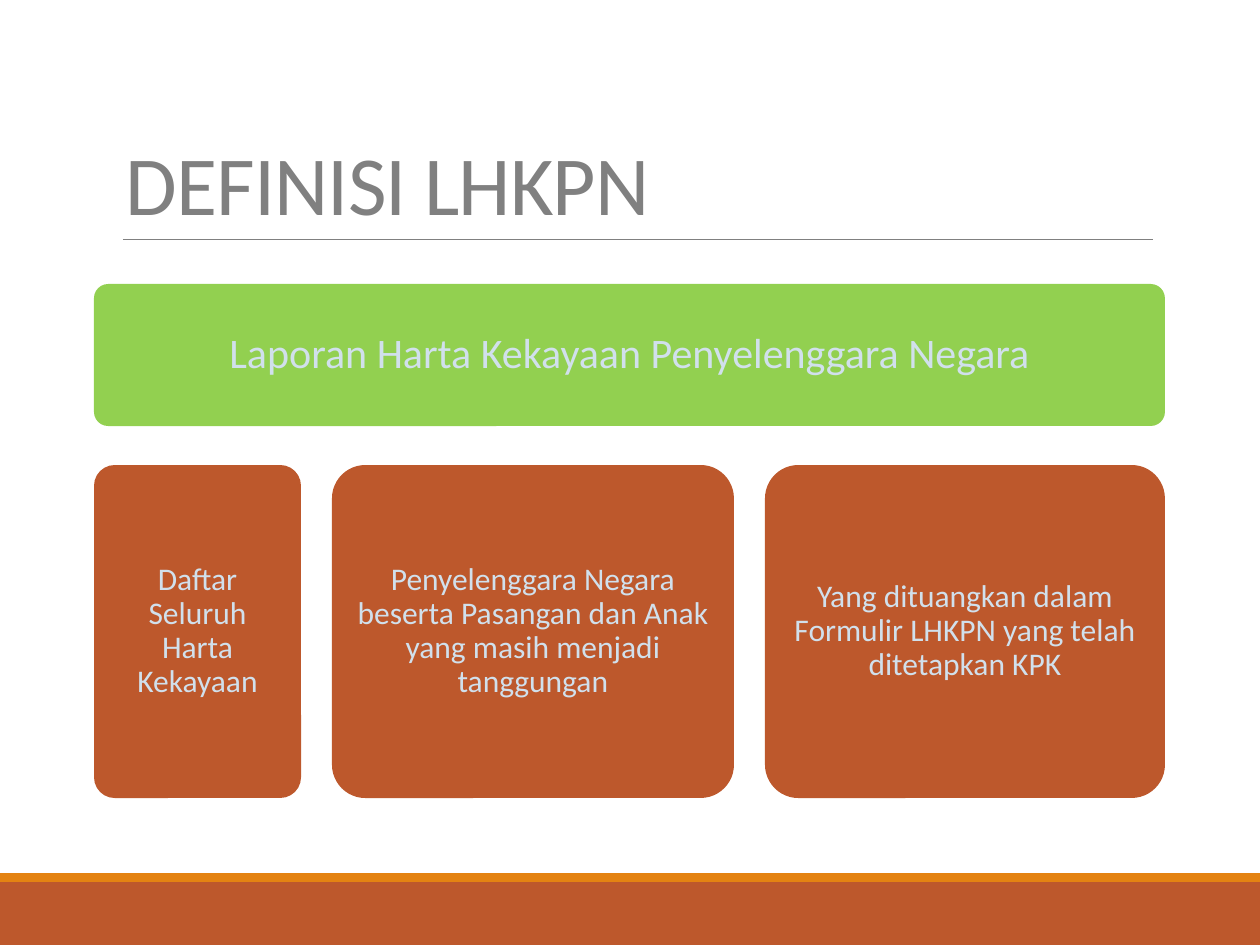
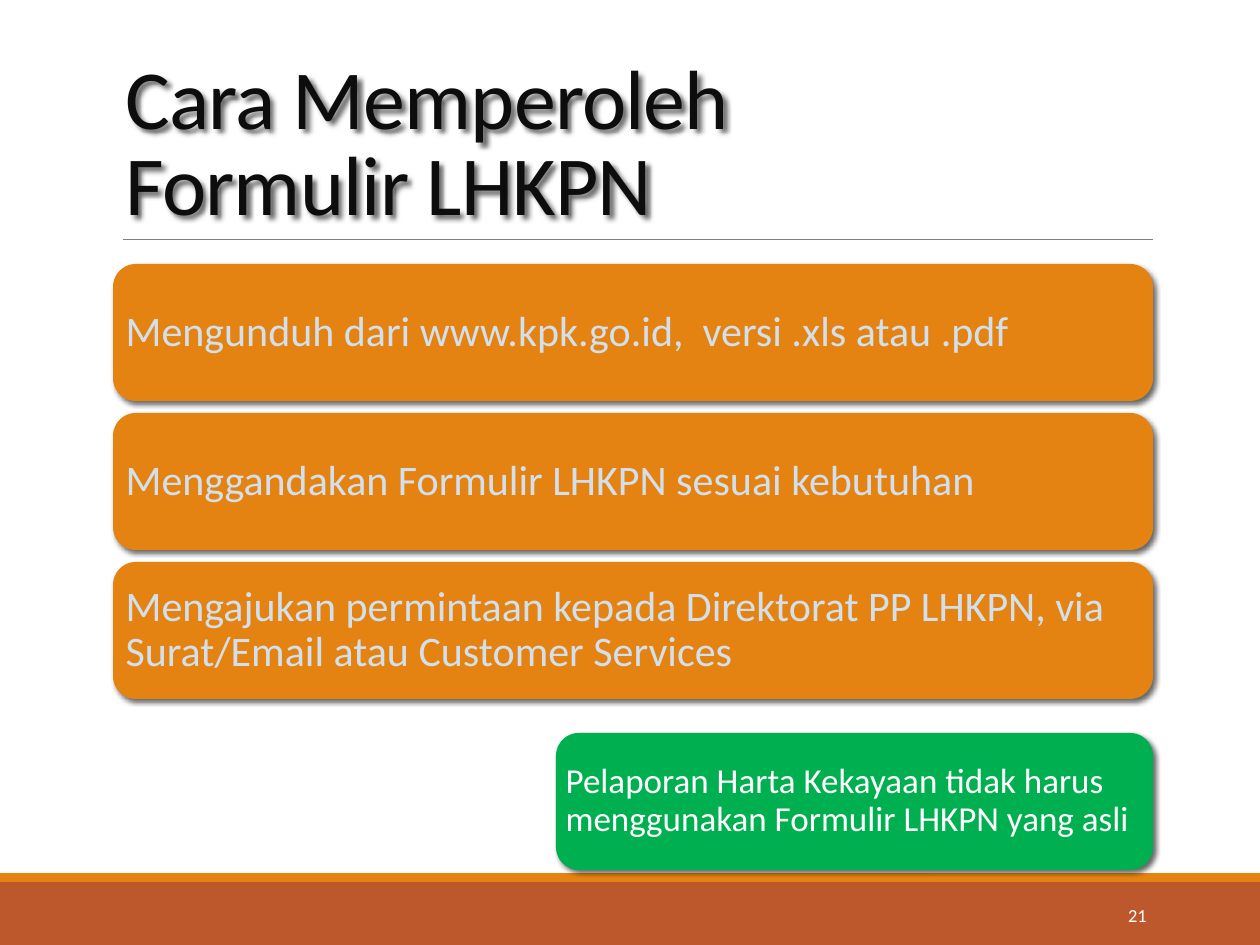
from dataclasses import dataclass

from lxml import etree
from pptx import Presentation
from pptx.dml.color import RGBColor
from pptx.enum.shapes import MSO_CONNECTOR, MSO_SHAPE
from pptx.enum.text import MSO_ANCHOR, MSO_AUTO_SIZE, PP_ALIGN
from pptx.oxml.ns import qn
from pptx.util import Emu, Pt

RECT, ROUND = MSO_SHAPE.RECTANGLE, MSO_SHAPE.ROUNDED_RECTANGLE
LINE = MSO_CONNECTOR.STRAIGHT
MIDDLE, BOTTOM = MSO_ANCHOR.MIDDLE, MSO_ANCHOR.BOTTOM
LEFT, CENTER, RIGHT = PP_ALIGN.LEFT, PP_ALIGN.CENTER, PP_ALIGN.RIGHT
FIXED = MSO_AUTO_SIZE.NONE
WIDE, HIGH = 1260, 945
SCALE = 914400 / 126


@dataclass(frozen=True)
class Theme:
    font: str = "Calibri"
    rust: str = "BD582C"
    orange: str = "E48312"
    lime: str = "92D050"
    green: str = "00B050"
    gray: str = "808080"
    ink: str = "0D0D0D"
    pale: str = "D1E0EC"
    white: str = "FFFFFF"
    title: float = 48
    lead: float = 24
    note: float = 20
    body: float = 18
    foot: float = 10.5


THEME = Theme()


def px(num):
    return Emu(round(num * SCALE))


def rgb(code):
    return RGBColor.from_string(code)


def add_run(para, text, size, color):
    run = para.add_run()
    run.text = text
    run.font.name = THEME.font
    run.font.size = Pt(size)
    run.font.color.rgb = rgb(color)
    return run


def add_glow(shape):
    """Give a shape the soft drop shadow of the deck."""
    shape.shadow.inherit = False
    effects = shape.element.spPr.find(qn("a:effectLst"))
    outer = etree.SubElement(effects, qn("a:outerShdw"), blurRad=str(Pt(3)),
                             dist=str(Pt(2)), dir="2700000", algn="tl", rotWithShape="0")
    black = etree.SubElement(outer, qn("a:srgbClr"), val="000000")
    etree.SubElement(black, qn("a:alpha"), val="60000")


def add_box(slide, kind, box, fill):
    shape = slide.shapes.add_shape(kind, *map(px, box))
    shape.shadow.inherit = False
    shape.fill.solid()
    shape.fill.fore_color.rgb = rgb(fill)
    shape.line.fill.background()
    return shape


def add_card(slide, box, fill, text, size, color, align, pad, curve=None):
    """Rounded box with one paragraph, centred on its height."""
    card = add_box(slide, ROUND, box, fill)
    if curve is not None:
        card.adjustments[0] = curve
    frame = card.text_frame
    frame.word_wrap = True
    frame.vertical_anchor = MIDDLE
    frame.margin_left = frame.margin_right = px(pad)
    frame.margin_top = frame.margin_bottom = px(pad)
    para = frame.paragraphs[0]
    para.alignment = align
    para.line_spacing = 0.9
    add_run(para, text, size, color)
    return card


def add_base(deck, lines, color):
    """Slide with bands, rule and title."""
    slide = deck.slides.add_slide(deck.slide_layouts[5])
    add_box(slide, RECT, (0, 882, WIDE, 63), THEME.rust)
    add_box(slide, RECT, (0, 873, WIDE, 9), THEME.orange)

    rule = slide.shapes.add_connector(LINE, px(123), px(239), px(1153), px(239))
    rule.line.color.rgb = rgb(THEME.gray)
    rule.line.width = Pt(0.5)
    etree.SubElement(rule.element.spPr, qn("a:effectLst"))

    title = slide.shapes.title
    title.left, title.top, title.width, title.height = map(px, (113, 39, 1040, 200))
    frame = title.text_frame
    frame.word_wrap = True
    frame.auto_size = FIXED
    frame.vertical_anchor = BOTTOM
    para = frame.paragraphs[0]
    para.alignment = LEFT
    para.line_spacing = 0.85
    for i, text in enumerate(lines):
        if i:
            para.add_line_break()
        run = add_run(para, text, THEME.title, color)
        run.font._element.set("spc", "-50")
    return slide


def add_parts(slide, box):
    """Wide heading card above a row of cards."""
    left, top, width, height = box
    add_card(slide, (left, top, width, 142), THEME.lime,
             "Laporan Harta Kekayaan Penyelenggara Negara",
             THEME.lead, THEME.pale, CENTER, 15, 0.1)
    parts = [
        (207, "Daftar Seluruh Harta Kekayaan"),
        (402, "Penyelenggara Negara beserta Pasangan dan Anak yang masih menjadi tanggungan"),
        (400, "Yang dituangkan dalam Formulir LHKPN yang telah ditetapkan KPK"),
    ]
    gap = (width - sum(wide for wide, _ in parts)) / (len(parts) - 1)
    for wide, text in parts:
        add_card(slide, (left, top + 181, wide, height - 181), THEME.rust, text,
                 THEME.body, THEME.pale, CENTER, 12, 0.1)
        left += wide + gap


def add_ways(slide, box):
    """Stack of full-width cards and a remark set to the right."""
    left, top, width, height = box
    tall, step, wide = 137, 149, 597
    ways = [
        "Mengunduh dari www.kpk.go.id,  versi .xls atau .pdf",
        "Menggandakan Formulir LHKPN sesuai kebutuhan",
        "Mengajukan permintaan kepada Direktorat PP LHKPN, via Surat/Email atau Customer Services",
    ]
    for i, text in enumerate(ways):
        add_glow(add_card(slide, (left, top + i * step, width, tall), THEME.orange,
                          text, THEME.lead, THEME.pale, LEFT, 6))
    add_glow(add_card(slide, (left + width - wide, top + height - tall, wide, tall),
                      THEME.green,
                      "Pelaporan Harta Kekayaan tidak harus menggunakan Formulir LHKPN yang asli",
                      THEME.note, THEME.white, LEFT, 3))


def add_page(slide, num):
    """Page number in the lower band."""
    frame = slide.shapes.add_textbox(*map(px, (1023, 890, 136, 50))).text_frame
    frame.word_wrap = True
    frame.vertical_anchor = MIDDLE
    para = frame.paragraphs[0]
    para.alignment = RIGHT
    add_run(para, num, THEME.foot, THEME.white)


def main():
    deck = Presentation()
    deck.slide_width, deck.slide_height = px(WIDE), px(HIGH)

    slide = add_base(deck, ["DEFINISI LHKPN"], THEME.gray)
    add_parts(slide, (94, 284, 1071, 514))

    slide = add_base(deck, ["Cara Memperoleh ", "Formulir LHKPN"], THEME.ink)
    add_glow(slide.shapes.title)
    add_ways(slide, (113, 264, 1040, 606))
    add_page(slide, "21")

    deck.save("out.pptx")


if __name__ == "__main__":
    main()
